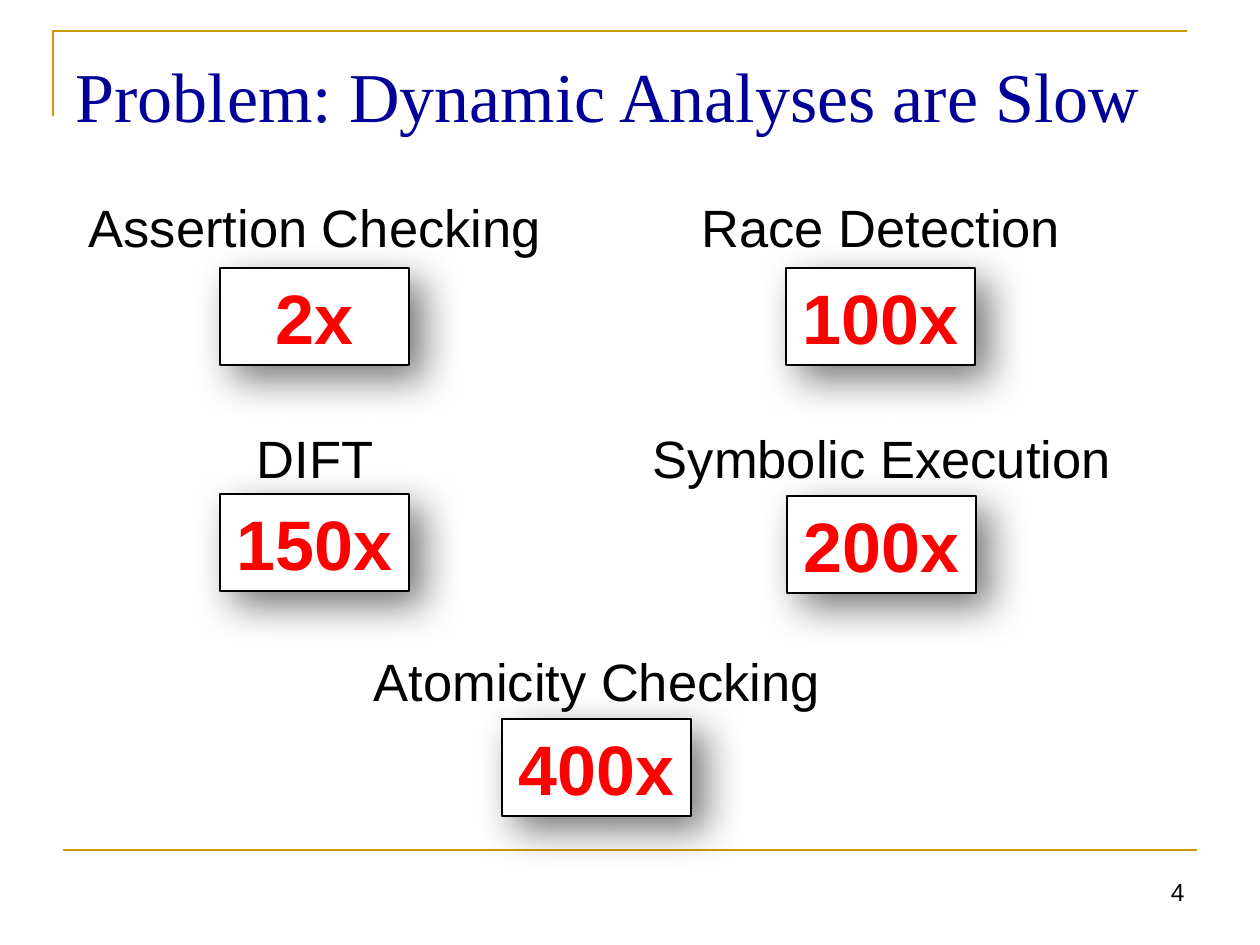
from lxml import etree
from pptx import Presentation
from pptx import util as u
from pptx.dml.color import RGBColor
from pptx.enum import shapes, text
from pptx.oxml.ns import qn

PX = 914400 / 126  # EMU per pixel


def px(*lengths):
    return [u.Emu(round(n * PX)) for n in lengths]


def write(shape, words, size, color="000000", font="Arial", bold=False,
          align=text.PP_ALIGN.CENTER, wrap=True, fit=text.MSO_AUTO_SIZE.NONE,
          anchor=text.MSO_ANCHOR.TOP):
    frame = shape.text_frame
    frame.text = words
    frame.word_wrap = wrap
    frame.auto_size = fit
    frame.vertical_anchor = anchor
    paragraph = frame.paragraphs[0]
    paragraph.alignment = align
    run_font = paragraph.runs[0].font
    run_font.name, run_font.size, run_font.bold = font, u.Pt(size), bold
    run_font.color.rgb = RGBColor.from_string(color)


deck = Presentation()
deck.slide_width, deck.slide_height = px(1260, 945)
slide = deck.slides.add_slide(deck.slide_layouts[5])
parts = slide.shapes

# Gold corner and footer rule
builder = parts.build_freeform(53, 116, scale=PX)
builder.add_line_segments([(53, 31), (1187, 31)], close=False)
corner = builder.convert_to_shape()
corner.fill.background()
corner.shadow.inherit = False
footer_rule = parts.add_connector(shapes.MSO_CONNECTOR.STRAIGHT,
                                  *px(63, 850, 1197, 850))
etree.SubElement(footer_rule._element.spPr, qn("a:effectLst"))
for rule in (corner, footer_rule):
    rule.line.color.rgb = RGBColor.from_string("CC9900")
    rule.line.width = u.Pt(1.5)

# Title
title = parts.title
title.left, title.top, title.width, title.height = px(63, 38, 1134, 88)
write(title, "Problem: Dynamic Analyses are Slow", 40, "000099",
      "Times New Roman", align=text.PP_ALIGN.LEFT)
title.text_frame.margin_top = px(15)[0]

# Page number
page_number = parts.add_textbox(*px(903, 871, 294, 64))
write(page_number, "4", 14, align=text.PP_ALIGN.RIGHT)

# Analyses: name, slowdown, centre, name top, name width, slowdown top
analyses = [
    ("Assertion Checking", "2x", 315, 189, 481, 268),
    ("DIFT", "150x", 315, 420, 144, 494),
    ("Atomicity Checking", "400x", 597, 643, 475, 719),
    ("Symbolic Execution", "200x", 882, 420, 488, 496),
    ("Race Detection", "100x", 881, 189, 387, 268),
]
GROW = text.MSO_AUTO_SIZE.SHAPE_TO_FIT_TEXT

# Slowdown boxes with a soft shadow
for _, slowdown, centre, _, _, top in analyses:
    box = parts.add_shape(shapes.MSO_SHAPE.RECTANGLE,
                          *px(centre - 95, top, 189, 97))
    box.fill.solid()
    box.fill.fore_color.rgb = RGBColor.from_string("FFFFFF")
    box.line.color.rgb = RGBColor.from_string("000000")
    box.line.width = u.Pt(0.75)
    box.shadow.inherit = False
    effects = box._element.spPr.find(qn("a:effectLst"))
    shadow = etree.SubElement(effects, qn("a:outerShdw"), blurRad=str(u.Pt(23)),
                              dist=str(u.Pt(11)), dir="2700000",
                              algn="tl", rotWithShape="0")
    tint = etree.SubElement(shadow, qn("a:srgbClr"), val="333333")
    etree.SubElement(tint, qn("a:alpha"), val="65000")
    write(box, slowdown, 40, "FF0000", bold=True, fit=GROW)

# Analysis names
for name, _, centre, top, width, _ in analyses:
    label = parts.add_textbox(*px(centre - width / 2, top, width, 77))
    write(label, name, 30, wrap=False, fit=GROW)

deck.save("out.pptx")
